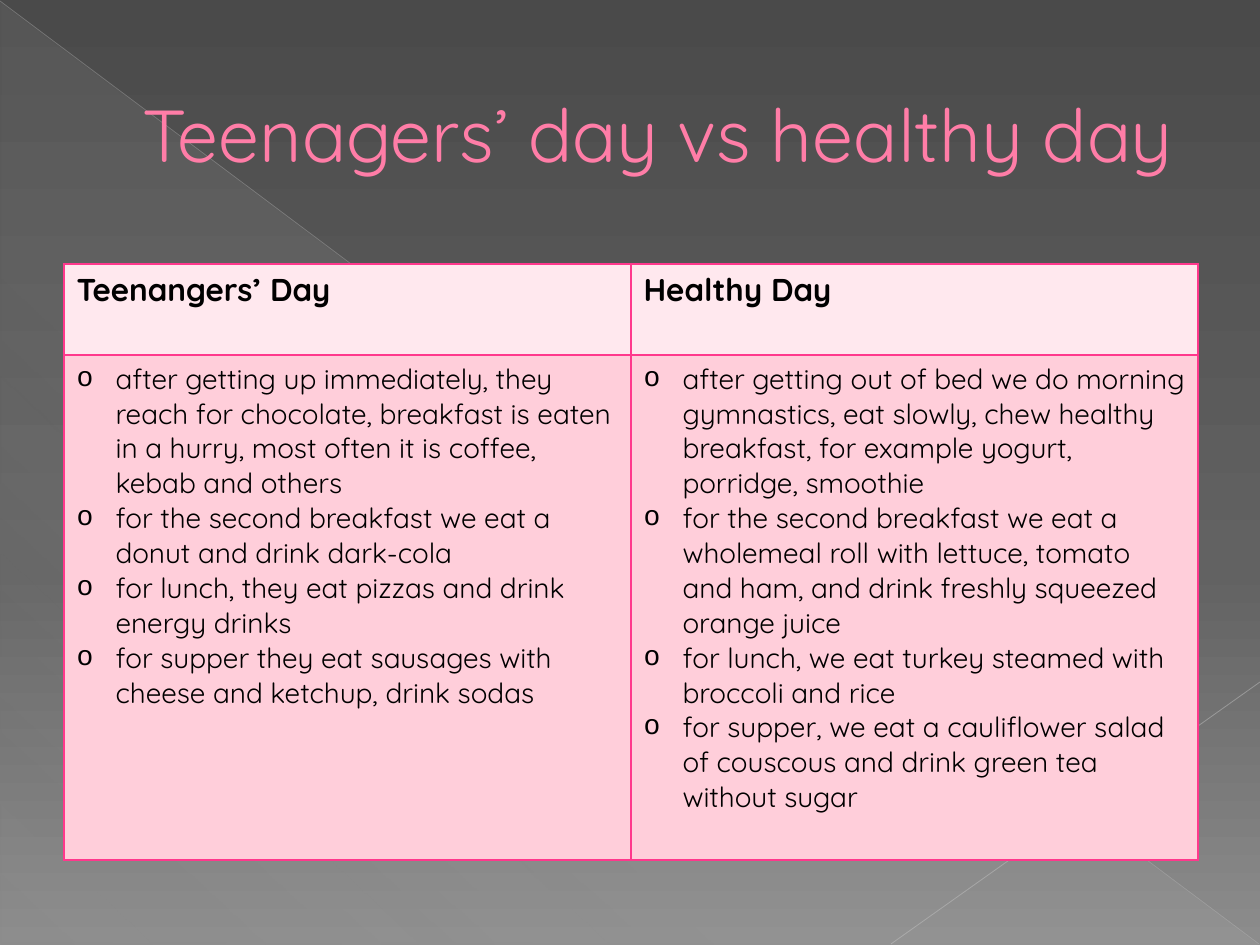
from lxml import etree
from pptx import Presentation
from pptx import util as u
from pptx.dml.color import RGBColor
from pptx.enum import shapes, text
from pptx.oxml import parse_xml
from pptx.oxml.ns import qn, nsdecls

TITLE = "Teenagers’ day vs healthy day"
HEADS = ["Teenangers’ Day", "Healthy Day"]
LISTS = [
    ["after getting up immediately, they reach for chocolate, breakfast is eaten "
     "in a hurry, most often it is coffee, kebab and others",
     "for the second breakfast we eat a donut and drink dark-cola",
     "for lunch, they eat pizzas and drink energy drinks",
     "for supper they eat sausages with cheese and ketchup, drink sodas"],
    ["after getting out of bed we do morning gymnastics, eat slowly, chew healthy "
     "breakfast, for example yogurt, porridge, smoothie",
     "for the second breakfast we eat a wholemeal roll with lettuce, tomato and ham, "
     "and drink freshly squeezed orange juice",
     "for lunch, we eat turkey steamed with broccoli and rice",
     "for supper, we eat a cauliflower salad of couscous and drink green tea without sugar"],
]
FONT = "Quicksand"
PINK, EDGE = "FF7DA7", "FF388C"
BACK = [(0, "4A4A4A", 100), (60, "626262", 100), (100, "8C8C8C", 100)]
SHEEN = [(0, "D2D2D2", 10), (70, "D2D2D2", 8), (100, "D2D2D2", 1)]
RAYS = [((0, 1), (1259, 944), "BFBFBF", 0.39, 35),
        ((1260, 682), (891, 944), "C6C6C6", 0.47, 45)]
ROWS = [(91, "FFE8EE"), (505, "FFCEDA")]
COL = 567


def px(n):
    return u.Emu(round(n * 914400 / 126))


def tint(code):
    return RGBColor.from_string(code)


def blend(stops, angle):
    marks = "".join(
        f'<a:gs pos="{pos * 1000}"><a:srgbClr val="{code}">'
        f'<a:alpha val="{alpha * 1000}"/></a:srgbClr></a:gs>'
        for pos, code, alpha in stops)
    return parse_xml(f'<a:gradFill {nsdecls("a")} rotWithShape="1"><a:gsLst>{marks}</a:gsLst>'
                     f'<a:lin ang="{angle * 60000}" scaled="0"/></a:gradFill>')


def regrade(fill, root, stops, angle):
    fill.solid()
    old = root.find(".//" + qn("a:solidFill"))
    old.getparent().replace(old, blend(stops, angle))


def write(frame, words, size=16, color="000000", bold=False, left=0, hang=0, bullet=None):
    for i, line in enumerate(words):
        para = frame.paragraphs[0] if i == 0 else frame.add_paragraph()
        props = para._p.get_or_add_pPr()
        props.set("marL", str(px(left)))
        props.set("indent", str(-px(hang)))
        if bullet:
            etree.SubElement(props, qn("a:buFont")).set("typeface", "Courier New")
            etree.SubElement(props, qn("a:buChar")).set("char", bullet)
        run = para.add_run()
        run.text = line
        font = run.font
        font.name, font.size, font.bold = FONT, u.Pt(size), bold
        font.color.rgb = tint(color)


def ray(slide, start, end, color, width, alpha):
    line = slide.shapes.add_connector(
        shapes.MSO_CONNECTOR.STRAIGHT, *map(px, start + end))
    line.line.color.rgb = tint(color)
    line.line.width = u.Pt(width)
    props = line._element.spPr
    shade = props.find(".//" + qn("a:srgbClr"))
    etree.SubElement(shade, qn("a:alpha")).set("val", str(alpha * 1000))
    etree.SubElement(props, qn("a:effectLst"))


def border(cell):
    props = cell._tc.get_or_add_tcPr()
    for side in "LRTB":
        props.append(parse_xml(
            f'<a:ln{side} {nsdecls("a")} w="12700"><a:solidFill>'
            f'<a:srgbClr val="{EDGE}"/></a:solidFill></a:ln{side}>'))


def main():
    prs = Presentation()
    prs.slide_width, prs.slide_height = px(1260), px(945)
    slide = prs.slides.add_slide(prs.slide_layouts[6])
    back = slide.background.fill
    regrade(back, slide._element.cSld, BACK, 90)

    sheen = slide.shapes.add_shape(
        shapes.MSO_SHAPE.RIGHT_TRIANGLE, px(1), px(2), px(1258), px(942))
    sheen.shadow.inherit = False
    sheen.line.fill.background()
    regrade(sheen.fill, sheen._element.spPr, SHEEN, 133)
    for item in RAYS:
        ray(slide, *item)

    frame = slide.shapes.add_textbox(px(63), px(37), px(1134), px(193)).text_frame
    frame.word_wrap = True
    frame.vertical_anchor = text.MSO_ANCHOR.MIDDLE
    write(frame, [TITLE], size=42, color=PINK, left=67)

    high = sum(tall for tall, _ in ROWS)
    table = slide.shapes.add_table(2, 2, px(64), px(264), px(2 * COL), px(high)).table
    for r, (tall, color) in enumerate(ROWS):
        table.rows[r].height = px(tall)
        for c in range(2):
            table.columns[c].width = px(COL)
            cell = table.cell(r, c)
            border(cell)
            cell.fill.solid()
            cell.fill.fore_color.rgb = tint(color)
            if r == 0:
                write(cell.text_frame, [HEADS[c]], size=18, bold=True)
            else:
                write(cell.text_frame, LISTS[c], left=39, hang=39, bullet="o")
    prs.save("out.pptx")


if __name__ == "__main__":
    main()
